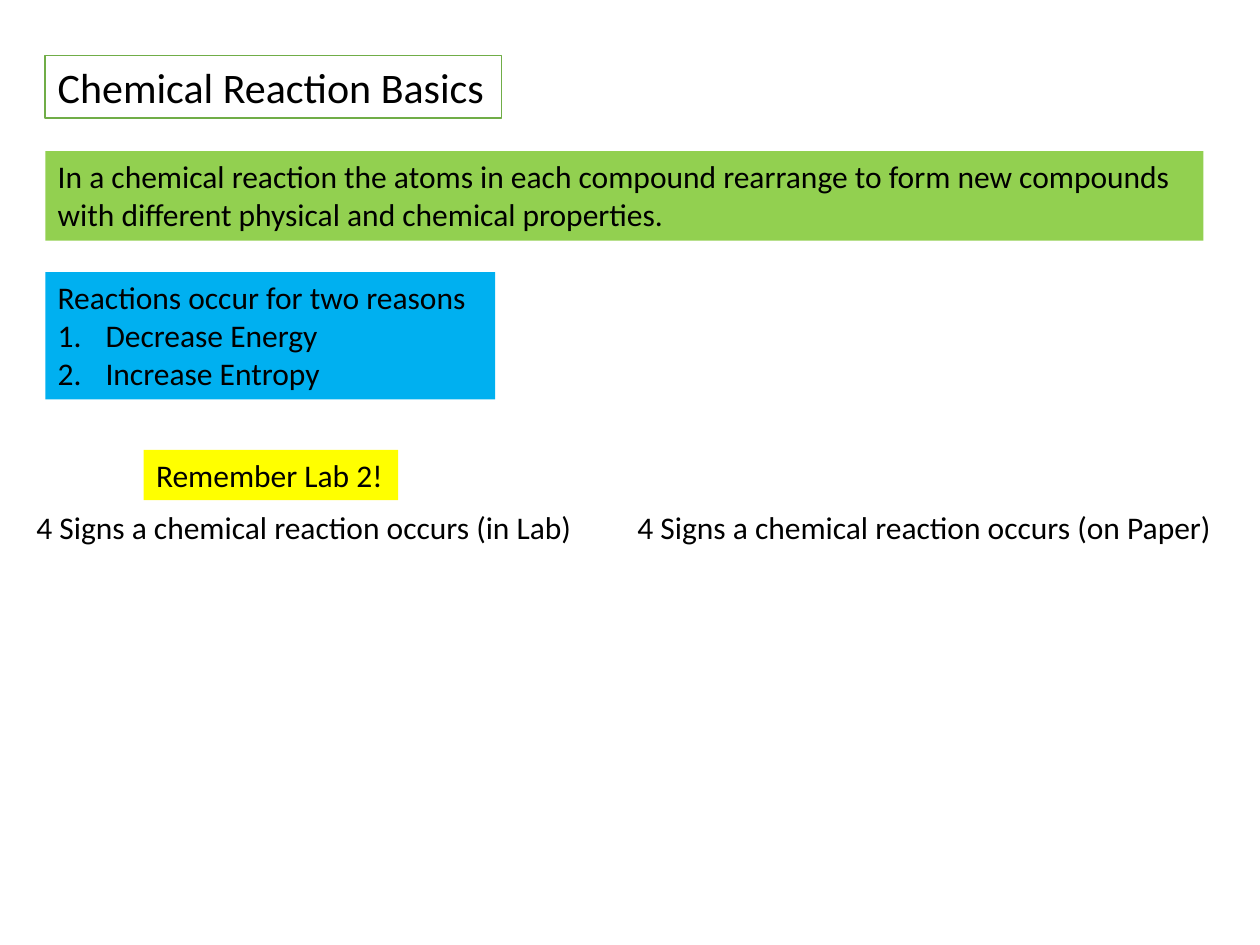
from dataclasses import dataclass
from typing import Optional

from lxml.etree import SubElement
from pptx import Presentation
from pptx.dml.color import RGBColor
from pptx.enum.text import MSO_ANCHOR, MSO_AUTO_SIZE
from pptx.oxml.ns import qn
from pptx.slide import Slide
from pptx.util import Inches, Pt

LEFT_MARGIN = 0.36
SIGNS_TOP = 3.98
LINE_HEIGHT = 0.4
NUMBER_INDENT = 0.38


@dataclass(frozen=True)
class Note:
    left: float
    top: float
    width: float
    height: float
    text: str
    size: int = 18
    fill: Optional[str] = None
    outline: Optional[str] = None
    wrap: bool = False
    numbered: tuple[str, ...] = ()


NOTES = (
    Note(LEFT_MARGIN, 0.44, 3.62, 0.5, "Chemical Reaction Basics",
         size=24, fill="FFFFFF", outline="70AD47"),
    Note(4.96, SIGNS_TOP, 4.81, LINE_HEIGHT,
         "4 Signs a chemical reaction occurs (on Paper)"),
    Note(0.19, SIGNS_TOP, 4.5, LINE_HEIGHT,
         "4 Signs a chemical reaction occurs (in Lab)"),
    Note(LEFT_MARGIN, 1.2, 9.19, 0.71,
         "In a chemical reaction the atoms in each compound rearrange to form "
         "new compounds with different physical and chemical properties.",
         fill="92D050", wrap=True),
    Note(LEFT_MARGIN, 2.16, 3.57, 1.01, "Reactions occur for two reasons",
         fill="00B0F0", wrap=True,
         numbered=("Decrease Energy", "Increase Entropy")),
    Note(1.14, 3.57, 2.02, LINE_HEIGHT, "Remember Lab 2!", fill="FFFF00"),
)


def color(hex_code: str) -> RGBColor:
    return RGBColor.from_string(hex_code)


def number_paragraph(paragraph) -> None:
    properties = paragraph._p.get_or_add_pPr()
    indent = Inches(NUMBER_INDENT)
    properties.set("marL", str(indent))
    properties.set("indent", str(-indent))
    SubElement(properties, qn("a:buFont"), typeface="+mj-lt")
    SubElement(properties, qn("a:buAutoNum"), type="arabicPeriod")


def draw_note(slide: Slide, note: Note) -> None:
    box = slide.shapes.add_textbox(
        Inches(note.left), Inches(note.top), Inches(note.width), Inches(note.height))
    if note.fill:
        box.fill.solid()
        box.fill.fore_color.rgb = color(note.fill)
    if note.outline:
        box.line.color.rgb = color(note.outline)
        box.line.width = Pt(1)

    frame = box.text_frame
    frame_format = {
        "word_wrap": note.wrap,
        "auto_size": MSO_AUTO_SIZE.SHAPE_TO_FIT_TEXT,
        "vertical_anchor": MSO_ANCHOR.TOP,
    }
    for attribute, value in frame_format.items():
        setattr(frame, attribute, value)

    frame.text = "\n".join((note.text, *note.numbered))
    font_format = {"name": "Calibri", "size": Pt(note.size)}
    for paragraph in frame.paragraphs:
        font = paragraph.runs[0].font
        for attribute, value in font_format.items():
            setattr(font, attribute, value)
        font.color.rgb = color("000000")
    for paragraph in frame.paragraphs[1:]:
        number_paragraph(paragraph)


def main() -> None:
    """Build the chemical reaction basics slide."""
    presentation = Presentation()
    presentation.slide_width = Inches(10)
    presentation.slide_height = Inches(7.5)
    slide = presentation.slides.add_slide(presentation.slide_layouts[6])
    for note in NOTES:
        draw_note(slide, note)
    presentation.save("out.pptx")


if __name__ == "__main__":
    main()
